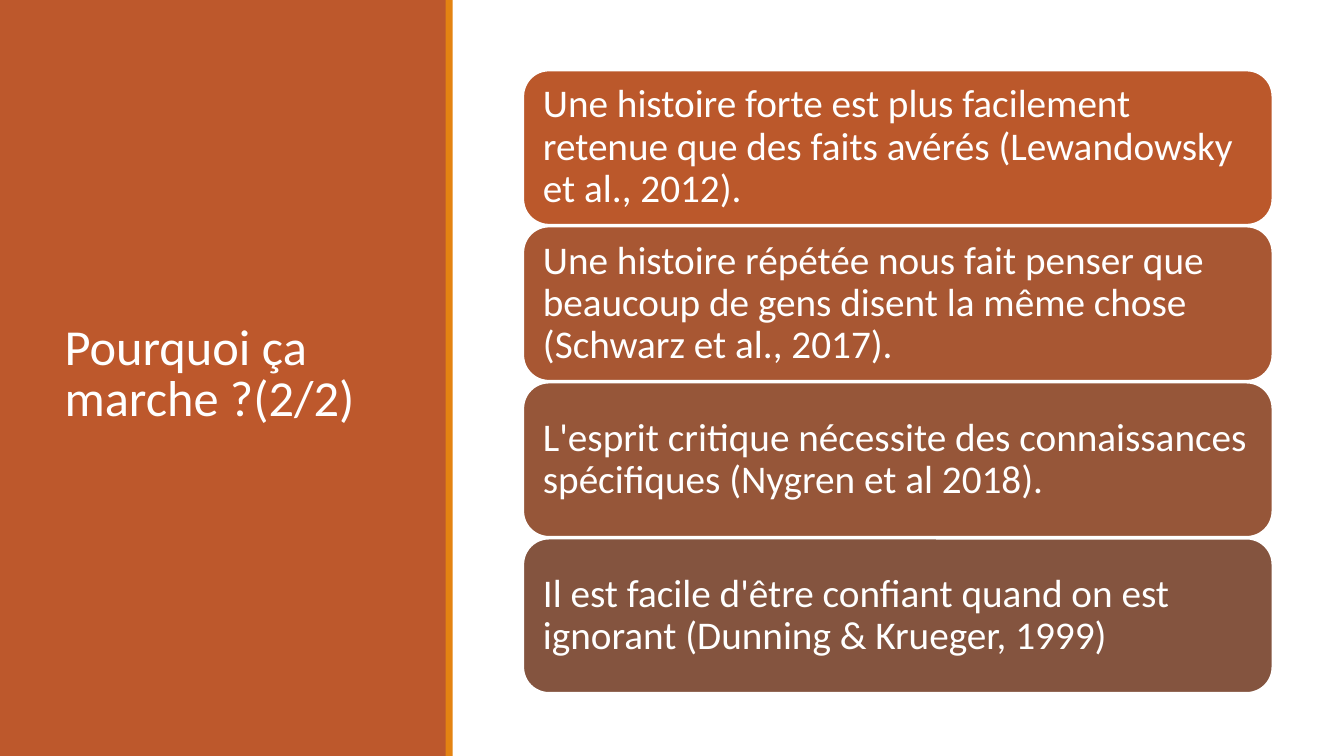
from pptx import Presentation
from pptx.dml.color import RGBColor
from pptx.enum.shapes import MSO_SHAPE as SHAPE
from pptx.enum.text import MSO_ANCHOR as ANCHOR, MSO_AUTO_SIZE as AUTO, PP_ALIGN as ALIGN
from pptx.util import Inches, Pt

WHITE, RUST, ORANGE = "FFFFFF", "BD582C", "E48312"
REASONS = [
    ("BB582B", "Une histoire forte est plus facilement retenue que des faits avérés "
               "(Lewandowsky et al., 2012)."),
    ("A85733", "Une histoire répétée nous fait penser que beaucoup de gens disent "
               "la même chose (Schwarz et al., 2017)."),
    ("965639", "L'esprit critique nécessite des connaissances spécifiques "
               "(Nygren et al 2018)."),
    ("84543F", "Il est facile d'être confiant quand on est ignorant "
               "(Dunning & Krueger, 1999)"),
]
CARD_TOP, CARD_STEP = 0.7, 1.548


def rgb(value):
    """Return the colour for a hex string."""
    return RGBColor.from_string(value)


def write(sp, text, size, spacing, inset_x, inset_y):
    """Fill a shape with left-aligned, vertically centred white text."""
    tf = sp.text_frame
    tf.text = text
    tf.word_wrap = True
    tf.auto_size = AUTO.NONE
    tf.vertical_anchor = ANCHOR.MIDDLE
    tf.margin_left = tf.margin_right = Inches(inset_x)
    tf.margin_top = tf.margin_bottom = Inches(inset_y)
    p = tf.paragraphs[0]
    p.alignment = ALIGN.LEFT
    p.line_spacing = spacing
    p.font.name = "Calibri"
    p.font.size = Pt(size)
    p.font.color.rgb = rgb(WHITE)


def add_block(s, kind, left, top, width, height, fill):
    """Add a borderless filled shape."""
    sp = s.shapes.add_shape(kind, Inches(left), Inches(top), Inches(width), Inches(height))
    sp.shadow.inherit = False
    sp.fill.solid()
    sp.fill.fore_color.rgb = rgb(fill)
    sp.line.fill.background()
    return sp


def add_card(s, top, fill, text):
    """Add a rounded card holding one reason."""
    sp = add_block(s, SHAPE.ROUNDED_RECTANGLE, 5.19, top, 7.43, 1.53, fill)
    sp.adjustments[0] = 0.167
    sp.line.color.rgb = rgb(WHITE)
    sp.line.width = Pt(1.25)
    write(sp, text, 28, 0.9, 0.12, 0.12)


def set_title(s, text):
    """Place and format the title placeholder."""
    title = s.shapes.title
    title.left, title.top = Inches(0.54), Inches(0.57)
    title.width, title.height = Inches(3.37), Inches(6.31)
    write(title, text, 36, 0.85, 0.1, 0.05)
    return title


def main():
    """Build the slide and save it."""
    prs = Presentation()
    prs.slide_width, prs.slide_height = Inches(13.33), Inches(7.5)
    s = prs.slides.add_slide(prs.slide_layouts[5])
    title = set_title(s, "Pourquoi ça marche ?(2/2)")
    panel = add_block(s, SHAPE.RECTANGLE, 0, 0, 4.43, 7.5, RUST)
    title.element.addprevious(panel.element)
    add_block(s, SHAPE.RECTANGLE, 4.42, 0, 0.07, 7.5, ORANGE)
    for i, (fill, text) in enumerate(REASONS):
        add_card(s, CARD_TOP + i * CARD_STEP, fill, text)
    prs.save("out.pptx")


if __name__ == "__main__":
    main()
